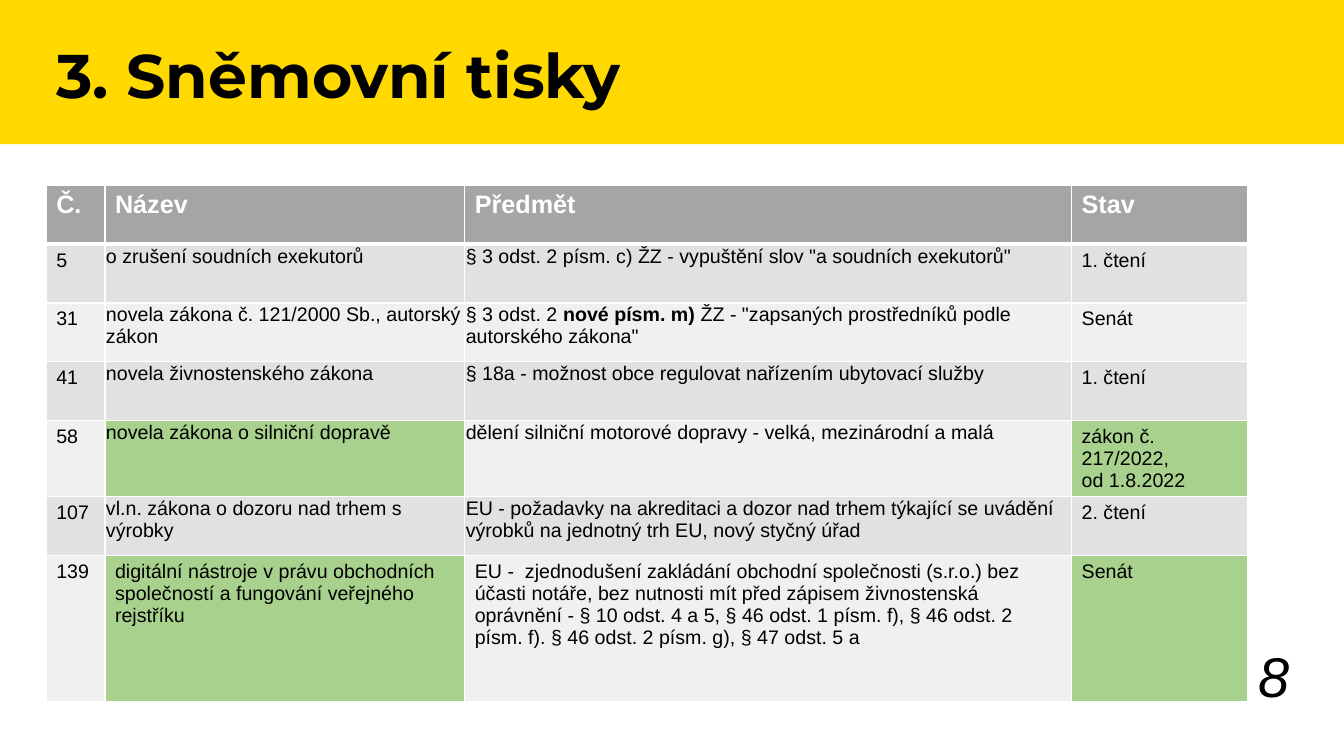
from dataclasses import dataclass

from lxml import etree
from pptx import Presentation
from pptx import util as u
from pptx.dml.color import RGBColor
from pptx.enum import shapes, text
from pptx.oxml import ns

Pt = u.Pt


@dataclass(frozen=True)
class Theme:
    band: str = "FFD900"
    head: str = "A5A5A5"
    odd: str = "E1E1E1"
    even: str = "F0F0F0"
    done: str = "A9D18E"
    ink: str = "000000"
    white: str = "FFFFFF"
    title_font: str = "Montserrat"
    font: str = "Arial"
    title: int = 44
    number: int = 40
    header: int = 18
    body: int = 14


THEME = Theme()

COLS = [42, 257, 433.5, 126]
HEIGHTS = [42, 42, 42, 42, 48, 42, 104.5]
# Double asterisks enclose bold words.
ROWS = [
    ["Č.", "Název", "Předmět", "Stav"],
    ["5", "o zrušení soudních exekutorů",
     '§ 3 odst. 2 písm. c) ŽZ - vypuštění slov "a soudních exekutorů"',
     "1. čtení"],
    ["31", "novela zákona č. 121/2000 Sb., autorský zákon",
     '§ 3 odst. 2 **nové písm. m)** ŽZ - "zapsaných prostředníků podle '
     'autorského zákona"',
     "Senát"],
    ["41", "novela živnostenského zákona",
     "§ 18a - možnost obce regulovat nařízením ubytovací služby",
     "1. čtení"],
    ["58", "novela zákona o silniční dopravě",
     "dělení silniční motorové dopravy - velká, mezinárodní a malá",
     "zákon č. 217/2022,\nod 1.8.2022"],
    ["107", "vl.n. zákona o dozoru nad trhem s výrobky",
     "EU - požadavky na akreditaci a dozor nad trhem týkající se uvádění "
     "výrobků na jednotný trh EU, nový styčný úřad",
     "2. čtení"],
    ["139",
     "digitální nástroje v právu obchodních společností a fungování "
     "veřejného rejstříku",
     "EU -  zjednodušení zakládání obchodní společnosti (s.r.o.) bez účasti "
     "notáře, bez nutnosti mít před zápisem živnostenská oprávnění - § 10 "
     "odst. 4 a 5, § 46 odst. 1 písm. f), § 46 odst. 2 písm. f). § 46 odst. 2 "
     "písm. g), § 47 odst. 5 a",
     "Senát"],
]
DONE = {(4, 1), (4, 3), (6, 1), (6, 3)}


def rgb(code):
    return RGBColor.from_string(code)


def style(run, size, color=THEME.ink, name=THEME.font, bold=False, italic=False):
    font = run.font
    font.name, font.size = name, Pt(size)
    font.bold, font.italic = bold, italic
    font.color.rgb = rgb(color)


def add_band(slide):
    """Put the coloured strip behind the title."""
    band = slide.shapes.add_shape(
        shapes.MSO_SHAPE.RECTANGLE, 0, 0, Pt(960), Pt(103))
    band.shadow.inherit = False
    band.fill.solid()
    band.fill.fore_color.rgb = rgb(THEME.band)
    band.line.fill.background()
    slide.shapes.title._element.addprevious(band._element)


def set_title(slide, words):
    title = slide.shapes.title
    title.left, title.top = Pt(33), Pt(29)
    title.width, title.height = Pt(887), Pt(73)
    frame = title.text_frame
    frame.text = words
    frame.word_wrap = True
    frame.auto_size = text.MSO_AUTO_SIZE.NONE
    frame.vertical_anchor = text.MSO_ANCHOR.TOP
    para = frame.paragraphs[0]
    para.alignment = text.PP_ALIGN.LEFT
    para.line_spacing = 0.9
    style(para.runs[0], THEME.title, name=THEME.title_font, bold=True)


def set_edges(cell, base):
    """Draw white cell borders; base is the width of the bottom one."""
    props = cell._tc.get_or_add_tcPr()
    for pos, (side, width) in enumerate(
            [("L", 1), ("R", 1), ("T", 1), ("B", base)]):
        line = etree.Element(ns.qn(f"a:ln{side}"), w=str(Pt(width)))
        fill = etree.SubElement(line, ns.qn("a:solidFill"))
        etree.SubElement(fill, ns.qn("a:srgbClr"), val=THEME.white)
        props.insert(pos, line)


def fill_cell(cell, words, row, col):
    head = row == 0
    shade = THEME.head if head else THEME.odd if row % 2 else THEME.even
    cell.fill.solid()
    cell.fill.fore_color.rgb = rgb(THEME.done if (row, col) in DONE else shade)
    set_edges(cell, 3 if head else 1)
    if 0 < row < len(ROWS) - 1 and col in (1, 2):
        cell.margin_left = cell.margin_top = cell.margin_right = Pt(0.75)
        cell.margin_bottom = 0
    frame = cell.text_frame
    frame.text = words.replace("**", "") if "**" not in words else ""
    if "**" in words:
        for part in words.split("**"):
            frame.paragraphs[0].add_run().text = part
    for para in frame.paragraphs:
        for pos, run in enumerate(para.runs):
            style(run, THEME.header if head else THEME.body,
                  THEME.white if head else THEME.ink,
                  bold=head or pos % 2 == 1)


def add_prints(slide):
    """Add the table of parliamentary prints."""
    table = slide.shapes.add_table(
        len(ROWS), len(COLS), Pt(33), Pt(132.5),
        Pt(sum(COLS)), Pt(sum(HEIGHTS))).table
    for col, width in zip(table.columns, COLS):
        col.width = Pt(width)
    for row, height in zip(table.rows, HEIGHTS):
        row.height = Pt(height)
    for row, line in enumerate(ROWS):
        for col, words in enumerate(line):
            fill_cell(table.cell(row, col), words, row, col)


def add_number(slide, words):
    box = slide.shapes.add_textbox(Pt(712), Pt(468.5), Pt(216), Pt(41))
    frame = box.text_frame
    frame.text = words
    frame.word_wrap = True
    frame.vertical_anchor = text.MSO_ANCHOR.BOTTOM
    para = frame.paragraphs[0]
    para.alignment = text.PP_ALIGN.RIGHT
    style(para.runs[0], THEME.number, italic=True)


def main():
    deck = Presentation()
    deck.slide_width, deck.slide_height = Pt(960), Pt(540)
    slide = deck.slides.add_slide(deck.slide_layouts.get_by_name("Title Only"))
    add_band(slide)
    set_title(slide, "3. Sněmovní tisky")
    add_prints(slide)
    add_number(slide, "8")
    deck.save("out.pptx")


if __name__ == "__main__":
    main()
